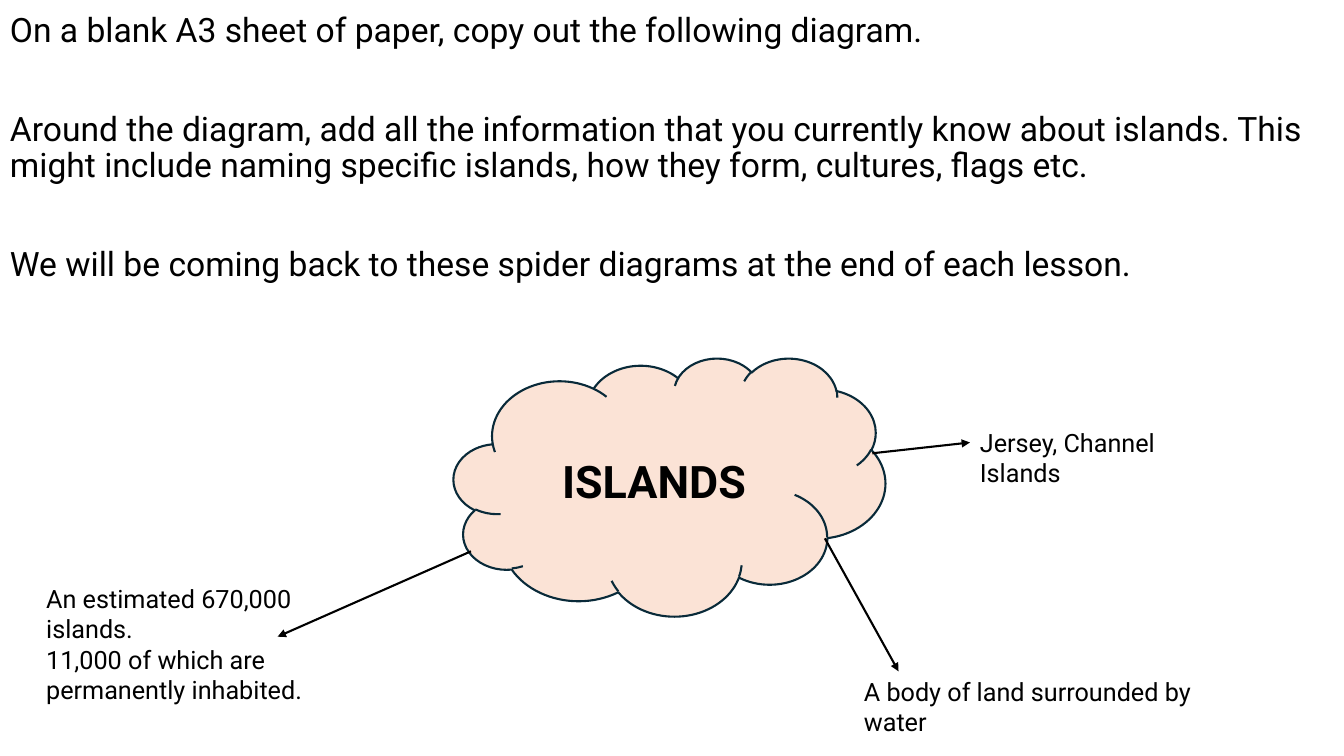
from collections import namedtuple

from lxml.etree import SubElement
from pptx import Presentation
from pptx.dml.color import RGBColor
from pptx.enum.shapes import MSO_CONNECTOR, MSO_SHAPE
from pptx.enum.text import MSO_ANCHOR, MSO_AUTO_SIZE, PP_ALIGN
from pptx.oxml.ns import qn
from pptx.util import Inches, Pt

WIDTH, HEIGHT = Inches(13.33), Inches(7.5)
FONT = "Roboto"
COLORS = {"text": "000000", "cloud": "FBE3D6", "outline": "092A39", "arrow": "000000"}

Box = namedtuple("Box", "left top width height")
Note = namedtuple("Note", "box lines arrow_start arrow_end")

INSTRUCTIONS = [
    "On a blank A3 sheet of paper, copy out the following diagram.",
    "Around the diagram, add all the information that you currently know about islands. "
    "This might include naming specific islands, how they form, cultures, flags etc.",
    "We will be coming back to these spider diagrams at the end of each lesson.",
]


def percent_box(left, top, width, height):
    """Turn percentages of the slide's size into a box."""
    return Box(*(int(share * size / 100) for share, size in
                 zip((left, top, width, height), (WIDTH, HEIGHT, WIDTH, HEIGHT))))


INSTRUCTIONS_BOX = percent_box(0, 1.07, 97.9, 85.6)
CLOUD_BOX = percent_box(33.76, 47.33, 32.11, 34.13)

# Arrow starts are shares of the cloud's box, arrow ends shares of the note's box.
NOTES = [
    Note(percent_box(72.17, 55.87, 20.56, 5.33),
         ["Jersey, Channel Islands"], (0.97, 0.37), (0, 0.5)),
    Note(percent_box(63.54, 88.8, 30.16, 5.33),
         ["A body of land surrounded by water"], (0.86, 0.7), (0.11, 0)),
    Note(percent_box(2.7, 76.53, 22.73, 17.47),
         ["An estimated 670,000 islands.", "11,000 of which are permanently inhabited."],
         (0.04, 0.75), (0.79, 0.44)),
]


def rgb(name):
    return RGBColor.from_string(COLORS[name])


def write_lines(text_frame, lines, size, bold=False):
    text_frame.word_wrap = True
    text_frame.text = "\n".join(lines)
    for paragraph in text_frame.paragraphs:
        font = paragraph.runs[0].font
        font.name, font.size, font.bold = FONT, Pt(size), bold
        font.color.rgb = rgb("text")


def point_in(box, across, down):
    return int(box.left + across * box.width), int(box.top + down * box.height)


def add_instructions(slide, box):
    text_frame = slide.shapes.add_textbox(*box).text_frame
    write_lines(text_frame, INSTRUCTIONS, 24)
    for index, paragraph in enumerate(text_frame.paragraphs):
        paragraph.line_spacing = 0.9
        paragraph.space_before = Pt(45 if index else 0)


def add_cloud(slide, box):
    cloud = slide.shapes.add_shape(MSO_SHAPE.CLOUD, *box)
    cloud.shadow.inherit = False
    cloud.fill.solid()
    cloud.fill.fore_color.rgb = rgb("cloud")
    cloud.line.color.rgb = rgb("outline")
    cloud.line.width = Pt(1.5)
    write_lines(cloud.text_frame, ["ISLANDS"], 32, bold=True)
    cloud.text_frame.vertical_anchor = MSO_ANCHOR.MIDDLE
    cloud.text_frame.paragraphs[0].alignment = PP_ALIGN.CENTER


def add_arrow(slide, start, end):
    arrow = slide.shapes.add_connector(MSO_CONNECTOR.STRAIGHT, *start, *end)
    arrow.line.color.rgb = rgb("arrow")
    arrow.line.width = Pt(1.5)
    SubElement(arrow.line._get_or_add_ln(), qn("a:tailEnd"), type="triangle")
    SubElement(arrow._element.spPr, qn("a:effectLst"))


def add_note(slide, note, cloud_box):
    text_frame = slide.shapes.add_textbox(*note.box).text_frame
    write_lines(text_frame, note.lines, 18)
    text_frame.auto_size = MSO_AUTO_SIZE.SHAPE_TO_FIT_TEXT
    add_arrow(slide, point_in(cloud_box, *note.arrow_start),
              point_in(note.box, *note.arrow_end))


def main():
    presentation = Presentation()
    presentation.slide_width, presentation.slide_height = WIDTH, HEIGHT
    slide = presentation.slides.add_slide(presentation.slide_layouts[6])
    add_instructions(slide, INSTRUCTIONS_BOX)
    add_cloud(slide, CLOUD_BOX)
    for note in NOTES:
        add_note(slide, note, CLOUD_BOX)
    presentation.save("out.pptx")


if __name__ == "__main__":
    main()
